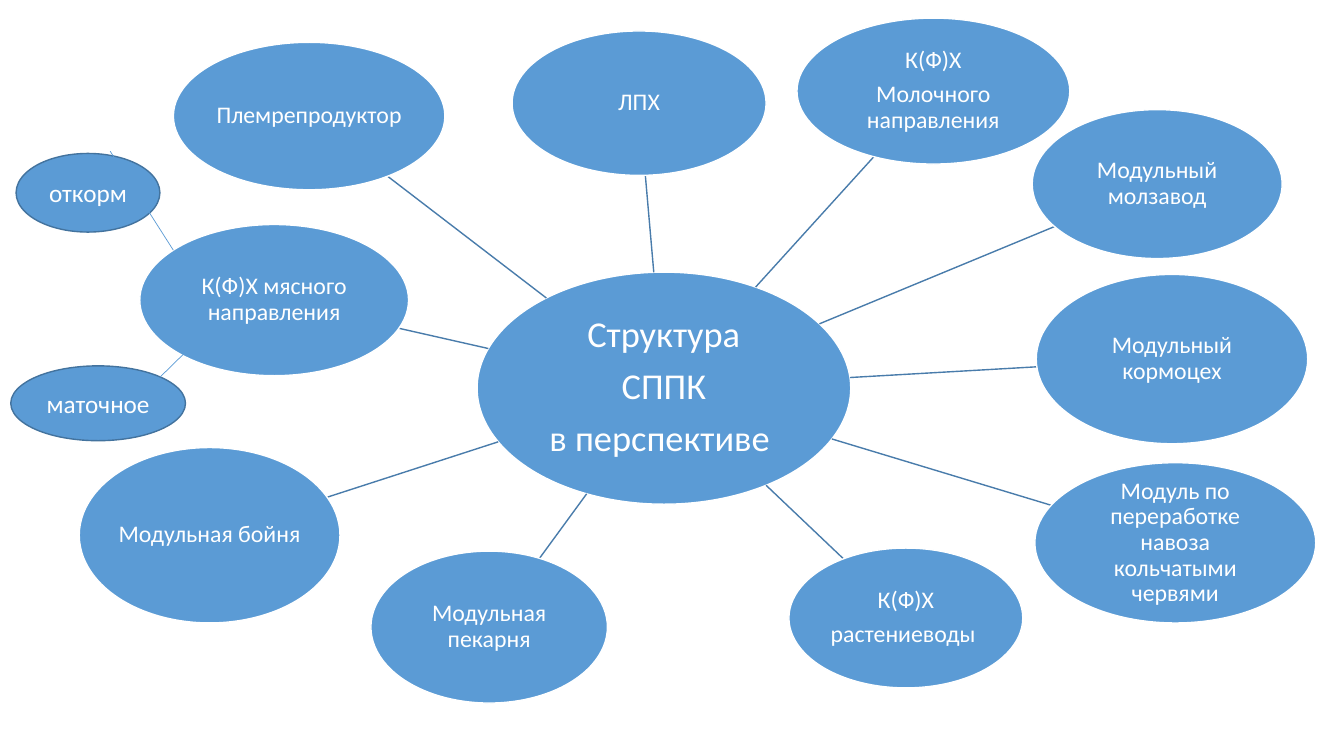
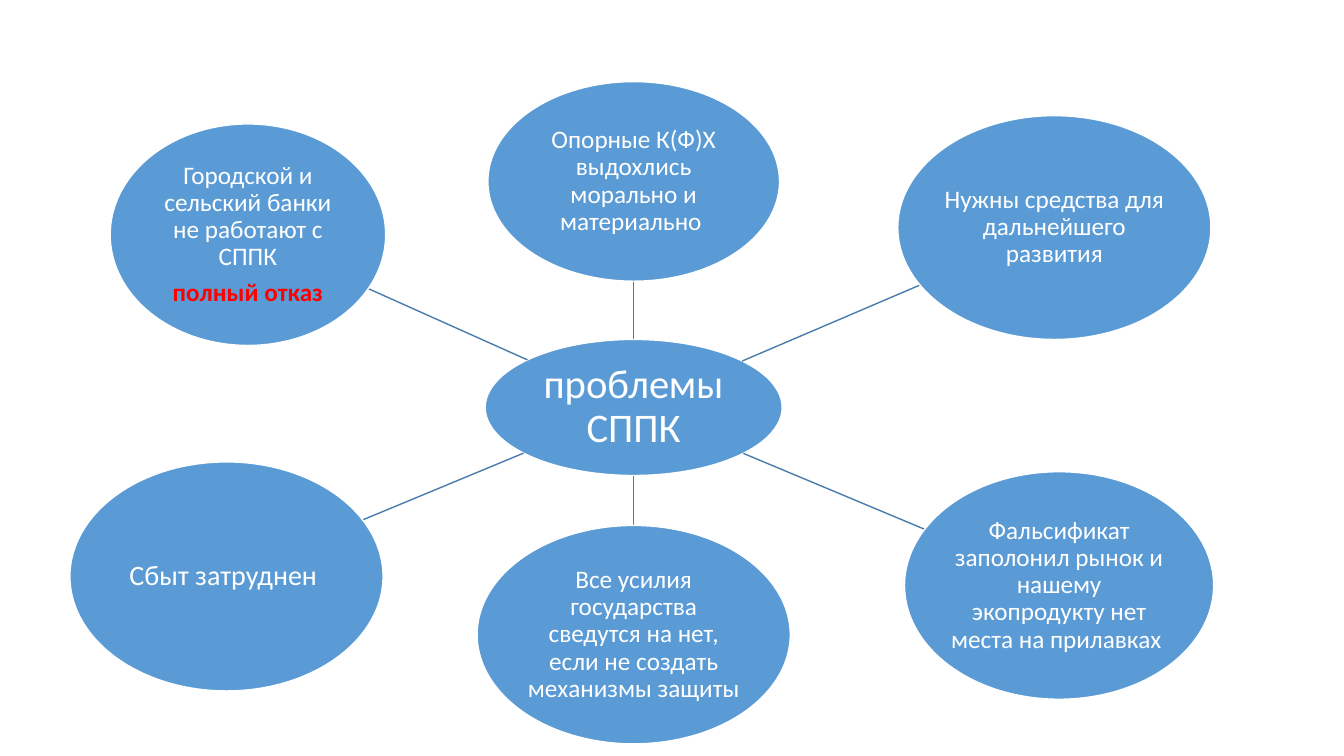
"""Build two hub-and-spoke slides about a farm cooperative."""
import math

import lxml.etree
import pptx
import pptx.dml.color
import pptx.enum.shapes
import pptx.enum.text
import pptx.oxml.ns
import pptx.util

BLUE, EDGE, SPOKE = "5B9BD5", "43739E", "497CAB"
WHITE, RED = "FFFFFF", "FF0000"


def tint(code):
    return pptx.dml.color.RGBColor.from_string(code)


def write(frame, lines, size=17, color=WHITE, bold=False, lead=0.9, gap=0.35):
    frame.word_wrap = True
    frame.vertical_anchor = pptx.enum.text.MSO_ANCHOR.MIDDLE
    inset = pptx.util.Inches(0.01)
    frame.margin_left = frame.margin_right = inset
    frame.margin_top = frame.margin_bottom = inset
    for spot, line in enumerate(lines):
        words, look = line if isinstance(line, tuple) else (line, {})
        para = frame.add_paragraph() if spot else frame.paragraphs[0]
        para.alignment = pptx.enum.text.PP_ALIGN.CENTER
        para.line_spacing = lead
        para.space_after = pptx.util.Pt(size * gap)
        run = para.add_run()
        run.text = words
        run.font.name = "Calibri"
        run.font.size = pptx.util.Pt(size)
        run.font.bold = look.get("bold", bold)
        run.font.color.rgb = tint(look.get("color", color))


class Deck:
    def __init__(self):
        self.show = pptx.Presentation()
        self.show.slide_width = pptx.util.Inches(13.333)
        self.show.slide_height = pptx.util.Inches(7.5)
        self.slide = None

    def page(self):
        self.slide = self.show.slides.add_slide(self.show.slide_layouts[6])

    def across(self, share):
        return round(self.show.slide_width * share / 100)

    def down(self, share):
        return round(self.show.slide_height * share / 100)

    def oval(self, box, lines, edge=WHITE, **look):
        left, top, wide, high = box
        shape = self.slide.shapes.add_shape(
            pptx.enum.shapes.MSO_SHAPE.OVAL,
            self.across(left), self.down(top),
            self.across(wide), self.down(high))
        shape.shadow.inherit = False
        shape.fill.solid()
        shape.fill.fore_color.rgb = tint(BLUE)
        shape.line.color.rgb = tint(edge)
        shape.line.width = pptx.util.Pt(1)
        write(shape.text_frame, lines, **look)

    def line(self, start, end, color=SPOKE, width=1):
        link = self.slide.shapes.add_connector(
            pptx.enum.shapes.MSO_CONNECTOR.STRAIGHT,
            self.across(start[0]), self.down(start[1]),
            self.across(end[0]), self.down(end[1]))
        link.line.color.rgb = tint(color)
        link.line.width = pptx.util.Pt(width)
        lxml.etree.SubElement(link._element.spPr,
                              pptx.oxml.ns.qn("a:effectLst"))

    def spoke(self, hub, node):
        self.line(rim(hub, node), rim(node, hub))

    def web(self, hub, lines, size, nodes):
        self.oval(hub, lines, size=size)
        for box, words, look in nodes:
            self.spoke(hub, box)
            self.oval(box, words, **look)


def mid(box):
    left, top, wide, high = box
    return left + wide / 2, top + high / 2


def rim(box, goal):
    """Return the point where the ray from one oval to another leaves it."""
    (x, y), (far, deep) = mid(box), mid(goal)
    run, rise = far - x, deep - y
    part = 1 / math.hypot(run / (box[2] / 2), rise / (box[3] / 2))
    return x + run * part, y + rise * part


def plan(deck):
    deck.page()
    deck.web((35.5, 36, 27.8, 30.7),
             ["Структура", "СППК", "в перспективе "], 26, [
        ((38.1, 4.1, 18.9, 19.1), ["ЛПХ"], {}),
        ((59.3, 2.4, 20.3, 19.3), ["К(Ф)Х", "Молочного направления"], {}),
        ((76.8, 14.5, 18.6, 19.7), ["Модульный молзавод"], {}),
        ((77.1, 36.3, 20.2, 22.4), ["Модульный кормоцех"], {}),
        ((77, 61.2, 20.9, 21.2),
         ["Модуль по переработке навоза кольчатыми червями"], {}),
        ((58.7, 72.5, 17.4, 18.5), ["К(Ф)Х", "растениеводы "], {}),
        ((27.6, 72.9, 17.6, 20.1), ["Модульная пекарня"], {}),
        ((5.9, 59.2, 19.4, 23.2), ["Модульная бойня"], {}),
        ((10.4, 29.7, 20, 20), ["К(Ф)Х мясного направления"], {}),
        ((12.9, 5.6, 20.2, 19.5), ["Племрепродуктор"], {}),
    ])
    for box, word, start, end in (
            ((1.2, 20.3, 10.7, 10.4), "откорм", (8.2, 20), (12.9, 33.1)),
            ((0.8, 48.4, 13, 9.9), "маточное", (11.9, 49.9), (16.2, 42.4))):
        deck.oval(box, [word], edge=EDGE, size=18, lead=1, gap=0)
        deck.line(start, end, color=BLUE, width=0.5)


def needs(deck):
    deck.page()
    text = {"size": 18}
    deck.web((36.1, 44.9, 22.1, 18), ["проблемы СППК"], 29, [
        ((36.3, 10.8, 21.7, 26.4),
         ["Опорные К(Ф)Х выдохлись морально и материально "], text),
        ((66.8, 15.3, 23.3, 29.6),
         ["Нужны средства для дальнейшего развития"], text),
        ((67.3, 62.4, 23, 30.1),
         ["Фальсификат заполонил рынок и нашему экопродукту "
          "нет места на прилавках "], text),
        ((35.5, 69.5, 23.3, 28.9),
         ["Все усилия государства сведутся на нет, если не создать "
          "механизмы защиты"], text),
        ((5.2, 61.1, 23.3, 30.3), ["Сбыт затруднен "], {"size": 20}),
        ((8.2, 16.4, 20.5, 29.3),
         ["Городской и сельский банки не работают с СППК",
          ("полный отказ", {"color": RED, "bold": True})], text),
    ])


def main():
    deck = Deck()
    plan(deck)
    needs(deck)
    deck.show.save("out.pptx")


if __name__ == "__main__":
    main()
